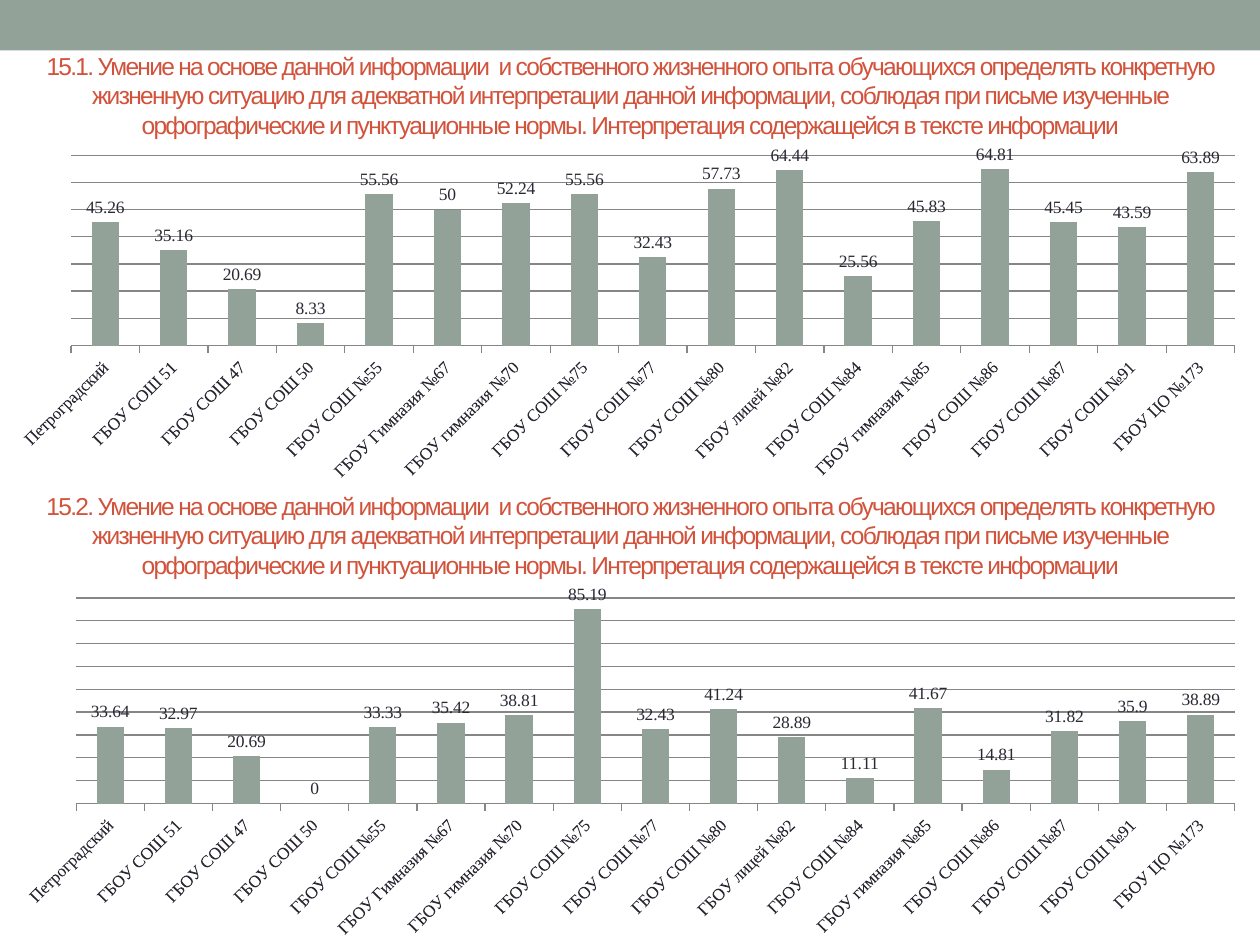
from dataclasses import dataclass

from pptx import Presentation
from pptx.chart.data import CategoryChartData
from pptx.dml.color import RGBColor as RGB
from pptx.enum.chart import XL_CHART_TYPE as CT, XL_LABEL_POSITION as LP
from pptx.enum.chart import XL_TICK_LABEL_POSITION as TLP, XL_TICK_MARK as TM
from pptx.enum.shapes import MSO_SHAPE as SHAPE
from pptx.enum.text import MSO_ANCHOR as ANCHOR, MSO_AUTO_SIZE as AUTO, PP_ALIGN as ALIGN
from pptx.util import Inches, Pt


@dataclass(frozen=True)
class Theme:
    accent: RGB = RGB(0x93, 0xA2, 0x99)
    heading: RGB = RGB(0xD2, 0x53, 0x3C)
    ink: RGB = RGB(0x29, 0x29, 0x34)
    grid: RGB = RGB(0x86, 0x86, 0x86)
    heading_font: str = "Arial"
    chart_font: str = "Times New Roman"
    heading_size: Pt = Pt(14)
    chart_size: Pt = Pt(10)
    tracking: int = -100  # hundredths of a point


def apply(obj, values):
    for name, value in values.items():
        setattr(obj, name, value)


def place(sp, box):
    apply(sp, dict(zip(("left", "top", "width", "height"), map(Inches, box))))


class SlideBuilder:
    def __init__(self, slide, theme):
        self.slide, self.theme = slide, theme

    def band(self, box):
        sp = self.slide.shapes.add_shape(SHAPE.RECTANGLE, *map(Inches, box))
        sp.shadow.inherit = False
        sp.fill.solid()
        sp.fill.fore_color.rgb = self.theme.accent
        sp.line.fill.background()
        # Keep the band behind the title
        self.slide.shapes.title._element.addprevious(sp._element)

    def heading(self, sp, box, text):
        t = self.theme
        place(sp, box)
        tf = sp.text_frame
        apply(tf, {"word_wrap": True, "auto_size": AUTO.NONE,
                   "vertical_anchor": ANCHOR.MIDDLE})
        p = tf.paragraphs[0]
        p.alignment = ALIGN.CENTER
        r = p.add_run()
        r.text = text
        apply(r.font, {"name": t.heading_font, "size": t.heading_size, "bold": False})
        r.font.color.rgb = t.heading
        r.font._element.set("spc", str(t.tracking))

    def title(self, box, text):
        self.heading(self.slide.shapes.title, box, text)

    def text(self, box, text):
        self.heading(self.slide.shapes.add_textbox(*map(Inches, box)), box, text)

    def columns(self, box, cats, vals, top):
        t = self.theme
        data = CategoryChartData()
        data.categories = cats
        data.add_series("Series 1", vals)
        chart = self.slide.shapes.add_chart(
            CT.COLUMN_CLUSTERED, *map(Inches, box), data).chart
        apply(chart, {"has_legend": False, "has_title": False})
        apply(chart.font, {"name": t.chart_font, "size": t.chart_size})
        chart.font.color.rgb = t.ink

        # Axes
        va, ca = chart.value_axis, chart.category_axis
        apply(va, {"visible": False, "has_major_gridlines": True,
                   "minimum_scale": 0, "maximum_scale": top, "major_unit": 10})
        apply(ca, {"major_tick_mark": TM.OUTSIDE, "minor_tick_mark": TM.NONE,
                   "tick_label_position": TLP.LOW})
        ca.tick_labels.font.size = t.chart_size
        ca.tick_labels.font._element.getparent().getparent().getparent().bodyPr.set(
            "rot", str(-45 * 60000))
        for line in (va.major_gridlines.format.line, ca.format.line):
            line.color.rgb = t.grid
            line.width = Pt(0.75)

        # Columns and their values
        plot = chart.plots[0]
        apply(plot, {"gap_width": 150, "vary_by_categories": False,
                     "has_data_labels": True})
        apply(plot.data_labels, {"show_value": True, "position": LP.OUTSIDE_END})
        fill = plot.series[0].format.fill
        fill.solid()
        fill.fore_color.rgb = t.accent


SKILL = ("Умение на основе данной информации  и собственного жизненного опыта "
         "обучающихся определять конкретную жизненную ситуацию для адекватной "
         "интерпретации данной информации, соблюдая при письме изученные "
         "орфографические и пунктуационные нормы. Интерпретация содержащейся "
         "в тексте информации")
SCHOOLS = ["Петроградский"] + ["ГБОУ " + name for name in (
    "СОШ 51", "СОШ 47", "СОШ 50", "СОШ №55", "Гимназия №67", "гимназия №70",
    "СОШ №75", "СОШ №77", "СОШ №80", "лицей №82", "СОШ №84", "гимназия №85",
    "СОШ №86", "СОШ №87", "СОШ №91", "ЦО №173")]
RESULTS_1 = [45.26, 35.16, 20.69, 8.33, 55.56, 50, 52.24, 55.56, 32.43, 57.73,
             64.44, 25.56, 45.83, 64.81, 45.45, 43.59, 63.89]
RESULTS_2 = [33.64, 32.97, 20.69, 0, 33.33, 35.42, 38.81, 85.19, 32.43, 41.24,
             28.89, 11.11, 41.67, 14.81, 31.82, 35.9, 38.89]


def main():
    prs = Presentation()
    prs.slide_width, prs.slide_height = Inches(10), Inches(7.5)
    s = SlideBuilder(prs.slides.add_slide(prs.slide_layouts[5]), Theme())

    s.band((0, 0, 10, 0.4))
    # Criterion 15.1
    s.title((0, 0.36, 10, 0.79), f"15.1. {SKILL}")
    s.columns((-0.04, 1.15, 10.04, 2.72), SCHOOLS, RESULTS_1, top=70)
    # Criterion 15.2
    s.text((0, 3.87, 10, 0.75), f"15.2. {SKILL}")
    s.columns((0, 4.64, 10, 2.86), SCHOOLS, RESULTS_2, top=90)

    prs.save("out.pptx")


if __name__ == "__main__":
    main()
